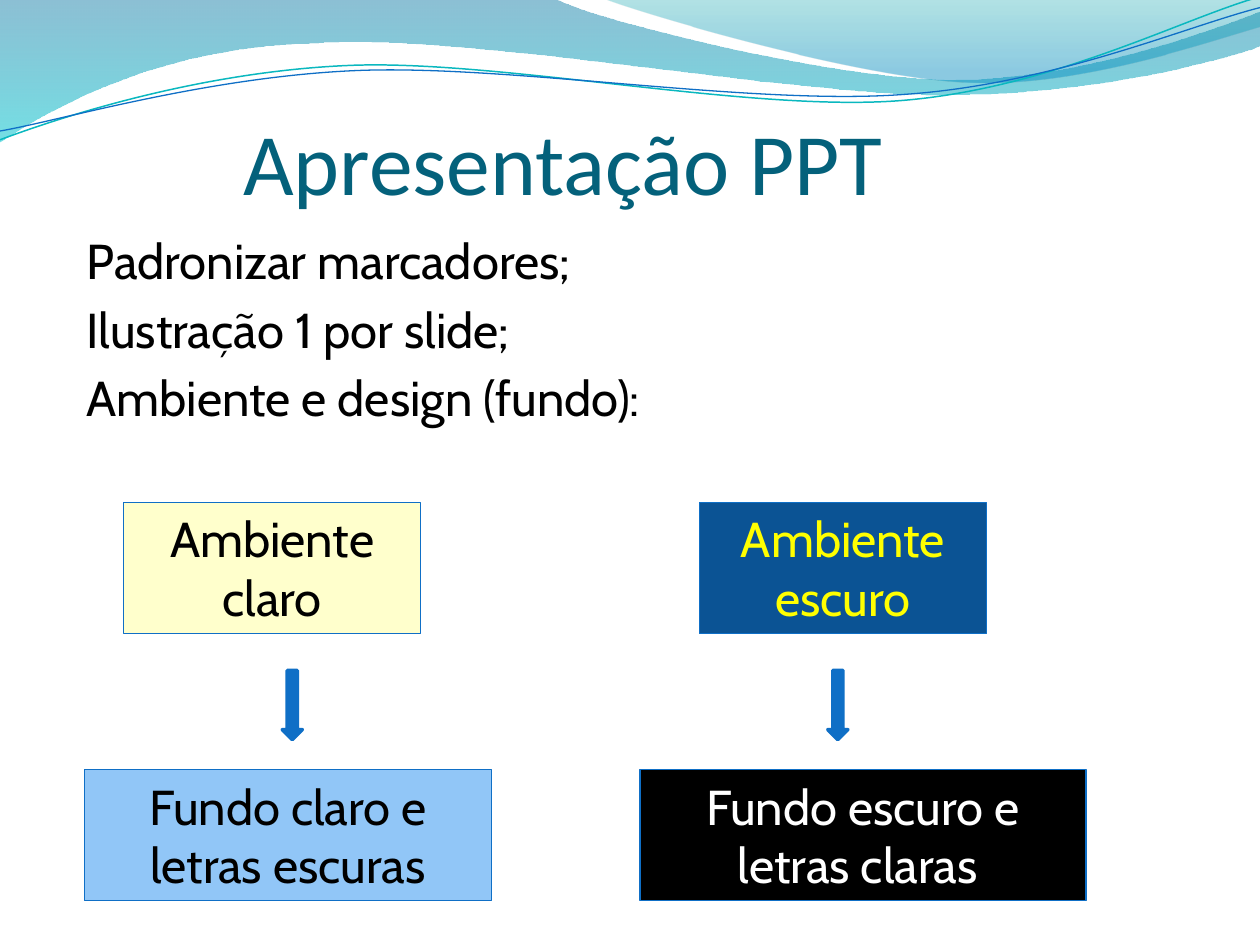
from math import cos, radians, sin

from lxml.etree import SubElement
from pptx import Presentation
from pptx.dml.color import RGBColor
from pptx.enum.shapes import MSO_SHAPE
from pptx.enum.text import MSO_ANCHOR, MSO_AUTO_SIZE, PP_ALIGN
from pptx.oxml.ns import qn
from pptx.util import Inches, Pt

BLUE = RGBColor(0x0F, 0x6F, 0xC6)
TEAL = RGBColor(0x0A, 0xB8, 0xBF)
TITLE_TEAL = RGBColor(0x04, 0x61, 0x7B)
WAVE_BLUE = RGBColor(0x00, 0x74, 0xA1)
WAVE_CYAN = RGBColor(0x00, 0xC6, 0xCF)
CREST_TEAL = RGBColor(0x00, 0xA1, 0xA9)
CREST_BLUE = RGBColor(0x00, 0x8B, 0xBF)
LIGHT_BLUE = RGBColor(0x91, 0xC6, 0xF7)
DARK_BLUE = RGBColor(0x0B, 0x53, 0x94)
CREAM = RGBColor(0xFF, 0xFF, 0xCC)
YELLOW = RGBColor(0xFF, 0xFF, 0x00)
BLACK = RGBColor(0x00, 0x00, 0x00)
WHITE = RGBColor(0xFF, 0xFF, 0xFF)

BODY_FORMAT = {"name": "Cabin", "size": Pt(28)}
TITLE_FORMAT = {"name": "Calibri", "size": Pt(50)}
LINE_ROTATION = 357.3

BACK_WAVE = [
    (0, 0), (4.4, -0.01),
    (4.76, 0.17, 6.64, 0.63, 7.58, 0.63), (8.53, 0.63, 9.58, 0.26, 10, 0.09),
    (10.01, 0.36),
    (9.83, 0.44, 8.7, 0.76, 7.46, 0.75), (6.22, 0.75, 3.82, 0.28, 2.57, 0.34),
    (1.29, 0.36, 0.46, 0.83, -0.01, 1.13), (0, 0),
]
FRONT_WAVE = [
    (4.79, -0.01),
    (5.09, 0.11, 6.82, 0.62, 7.69, 0.65), (8.56, 0.69, 9.61, 0.32, 10, 0.21),
    (10, 0), (4.79, -0.01),
]
TEAL_LINE = [
    (0, 1.11),
    (0.48, 0.93, 1.58, 0.57, 2.77, 0.52), (3.95, 0.47, 5.93, 0.89, 7.13, 0.8),
    (8.33, 0.71, 9.38, 0.15, 9.98, -0.02),
]
BLUE_LINE = [
    (0, 1.04),
    (0.47, 0.96, 1.64, 0.61, 2.83, 0.56), (4.03, 0.51, 5.97, 0.84, 7.17, 0.75),
    (8.36, 0.67, 9.41, 0.21, 10, 0.06),
]


def set_format(target, values):
    """Set each attribute named in a dict of format values."""
    for name, value in values.items():
        setattr(target, name, value)


def to_local(box, rotation, x, y):
    """Express a slide point in the unrotated frame of a box."""
    left, top, width, height = box
    angle = radians(-rotation)
    across, down = x - left - width / 2, y - top - height / 2
    return (Inches(width / 2 + across * cos(angle) - down * sin(angle)),
            Inches(height / 2 + across * sin(angle) + down * cos(angle)))


def add_outline(slide, box, segments, rotation=0, close=False):
    """Draw line and cubic curve segments as a freeform in a box."""
    left, top, width, height = (Inches(value) for value in box)
    builder = slide.shapes.build_freeform(left, top)
    builder.add_line_segments([(left + width, top + height)], close=close)
    shape = builder.convert_to_shape()
    set_format(shape, {
        "left": left, "top": top, "width": width, "height": height, "rotation": rotation})
    shape.shadow.inherit = False
    outline = next(shape.element.iter(qn("a:path")))
    outline.set("w", str(width))
    outline.set("h", str(height))
    for command in list(outline):
        outline.remove(command)
    for index, segment in enumerate(segments):
        curve_or_line = "a:cubicBezTo" if len(segment) == 6 else "a:lnTo"
        command = SubElement(outline, qn(curve_or_line if index else "a:moveTo"))
        for x, y in zip(segment[::2], segment[1::2]):
            local_x, local_y = to_local(box, rotation, x, y)
            SubElement(command, qn("a:pt"), x=str(local_x), y=str(local_y))
    if close:
        SubElement(outline, qn("a:close"))
    return shape


def add_wave(slide, box, segments, stops):
    """Draw a closed wave with a translucent vertical gradient."""
    shape = add_outline(slide, box, segments, close=True)
    shape.line.fill.background()
    shape.fill.gradient()
    shape.fill.gradient_angle = 270
    for stop, (position, color, opacity) in zip(shape.fill.gradient_stops, stops):
        stop.position = position
        stop.color.rgb = color
    colors = shape.element.spPr.iter(qn("a:srgbClr"))
    for element, (position, color, opacity) in zip(colors, stops):
        SubElement(element, qn("a:alpha"), val=str(opacity * 1000))


def add_header(slide):
    """Draw the waves and thin lines along the slide top."""
    add_wave(slide, (-0.01, -0.01, 10.02, 1.14), BACK_WAVE,
             [(0, WAVE_BLUE, 45), (1, WAVE_CYAN, 55)])
    add_wave(slide, (4.79, -0.01, 5.21, 0.7), FRONT_WAVE,
             [(0, CREST_TEAL, 30), (0.8, CREST_BLUE, 45)])
    for box, segments, color, width in (
        ((-0.02, 0.22, 10.02, 0.71), TEAL_LINE, TEAL, 0.85),
        ((-0.02, 0.3, 10.03, 0.58), BLUE_LINE, BLUE, 0.75),
    ):
        shape = add_outline(slide, box, segments, LINE_ROTATION)
        shape.fill.background()
        shape.line.color.rgb = color
        shape.line.width = Pt(width)


def add_text(paragraph, text, values, color):
    """Add one formatted run to a paragraph."""
    run = paragraph.add_run()
    run.text = text
    set_format(run.font, values)
    run.font.color.rgb = color


def add_title(slide, left, top, width, height):
    """Place the title at the bottom of its box."""
    box = slide.shapes.add_textbox(Inches(left), Inches(top), Inches(width), Inches(height))
    set_format(box.text_frame, {
        "word_wrap": True, "vertical_anchor": MSO_ANCHOR.BOTTOM, "margin_left": 0,
        "margin_right": 0, "margin_top": Inches(0.05), "margin_bottom": 0,
    })
    add_text(box.text_frame.paragraphs[0], "Apresentação PPT", TITLE_FORMAT, TITLE_TEAL)


def add_body(slide, left, top, width, height, lines):
    """Place the recommendations with a hanging indent."""
    box = slide.shapes.add_textbox(Inches(left), Inches(top), Inches(width), Inches(height))
    frame = box.text_frame
    frame.word_wrap = True
    for index, line in enumerate(lines):
        paragraph = frame.add_paragraph() if index else frame.paragraphs[0]
        paragraph.space_before = Pt(5.6)
        properties = paragraph._p.get_or_add_pPr()
        properties.set("marL", str(Inches(0.3)))
        properties.set("indent", str(-Inches(0.3)))
        add_text(paragraph, line, BODY_FORMAT, BLACK)


def add_block(slide, kind, left, top, width, height, fill, line_width):
    """Draw a filled preset shape with a blue outline."""
    shape = slide.shapes.add_shape(
        kind, Inches(left), Inches(top), Inches(width), Inches(height))
    shape.shadow.inherit = False
    shape.fill.solid()
    shape.fill.fore_color.rgb = fill
    shape.line.color.rgb = BLUE
    shape.line.width = Pt(line_width)
    return shape


def add_flow(slide, left, top, arrow_offset, boxes):
    """Draw an environment box, an arrow and its advice box."""
    for (offset, width, text, fill, color), drop in zip(boxes, (2.12, 0)):
        shape = add_block(
            slide, MSO_SHAPE.RECTANGLE, left + offset, top + drop, width, 1.04, fill, 0.75)
        set_format(shape.text_frame, {
            "word_wrap": True, "auto_size": MSO_AUTO_SIZE.SHAPE_TO_FIT_TEXT,
            "vertical_anchor": MSO_ANCHOR.TOP})
        paragraph = shape.text_frame.paragraphs[0]
        paragraph.alignment = PP_ALIGN.CENTER
        add_text(paragraph, text, BODY_FORMAT, color)
    add_block(
        slide, MSO_SHAPE.DOWN_ARROW, left + arrow_offset, top + 1.33, 0.16, 0.55, BLUE, 2)


def main():
    """Build and save the slide."""
    presentation = Presentation()
    set_format(presentation, {"slide_width": Inches(10), "slide_height": Inches(7.5)})
    slide = presentation.slides.add_slide(presentation.slide_layouts[6])
    add_header(slide)
    add_title(slide, 1.93, 0.44, 9, 1.25)
    add_body(slide, 0.59, 1.78, 6.3, 1.97, [
        "Padronizar marcadores;", "Ilustração 1 por slide;", "Ambiente e design (fundo):"])
    add_flow(slide, 0.67, 3.99, 1.57, [
        (0, 3.23, "Fundo claro e letras escuras", LIGHT_BLUE, BLACK),
        (0.31, 2.36, "Ambiente claro", CREAM, BLACK)])
    add_flow(slide, 5.08, 3.99, 1.49, [
        (0, 3.54, "Fundo escuro e letras claras ", BLACK, WHITE),
        (0.47, 2.28, "Ambiente escuro", DARK_BLUE, YELLOW)])
    presentation.save("out.pptx")


if __name__ == "__main__":
    main()
